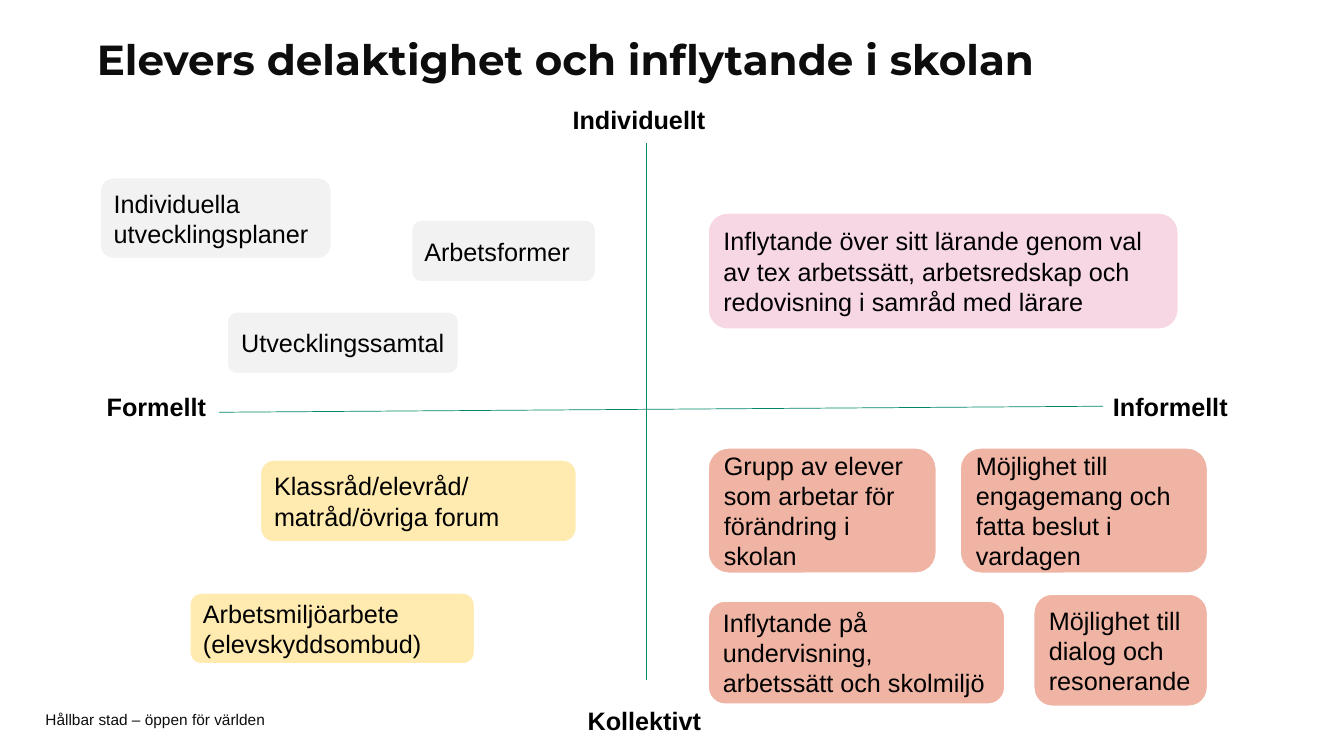
from lxml import etree
from pptx import Presentation
from pptx.dml.color import RGBColor
from pptx.enum.shapes import MSO_CONNECTOR, MSO_SHAPE
from pptx.enum.text import MSO_ANCHOR, MSO_AUTO_SIZE, PP_ALIGN
from pptx.oxml.ns import qn
from pptx.util import Pt

PX = 9144
TITLE_ONLY = 5
STRAIGHT = MSO_CONNECTOR.STRAIGHT
ROUNDED = MSO_SHAPE.ROUNDED_RECTANGLE
TOP, MIDDLE = MSO_ANCHOR.TOP, MSO_ANCHOR.MIDDLE
NO_FIT, GROW = MSO_AUTO_SIZE.NONE, MSO_AUTO_SIZE.SHAPE_TO_FIT_TEXT
LEFT, CENTER = PP_ALIGN.LEFT, PP_ALIGN.CENTER

COLORS = {
    "ink": "0D0D0D",
    "black": "000000",
    "white": "FFFFFF",
    "axis": "008767",
    "grey": "F2F2F2",
    "pink": "F7D7E4",
    "yellow": "FFEBAF",
    "coral": "F0B4A4",
}
TITLE_FONT = {"name": "Montserrat", "size": Pt(30), "bold": True}
LABEL_FONT = {"name": "Arial", "size": Pt(18), "bold": True}
CARD_FONT = {"name": "Arial", "size": Pt(18), "bold": False}
FOOTER_FONT = {"name": "Arial", "size": Pt(11), "bold": False}

AXES = [(641, 142, 641, 675), (1094, 403, 217, 409)]
LABELS = [
    ("Individuellt", (558, 99, 165, 40)),
    ("Kollektivt", (573, 695, 165, 40)),
    ("Formellt", (96, 383, 165, 40)),
    ("Informellt", (1094, 383, 137, 40)),
]
CARDS = [
    ("Individuella utvecklingsplaner", (99, 176, 230, 81), "grey", LEFT),
    ("Utvecklingssamtal", (225, 309, 230, 62), "grey", CENTER),
    ("Arbetsformer", (408, 218, 183, 62), "grey", LEFT),
    ("Inflytande över sitt lärande genom val av tex arbetssätt, "
     "arbetsredskap och redovisning i samråd med lärare",
     (702, 211, 467, 116), "pink", LEFT),
    ("Klassråd/elevråd/matråd/övriga forum", (258, 456, 314, 82), "yellow", LEFT),
    ("Arbetsmiljöarbete (elevskyddsombud)", (188, 588, 283, 71), "yellow", LEFT),
    ("Grupp av elever som arbetar för förändring i skolan",
     (702, 444, 227, 125), "coral", LEFT),
    ("Möjlighet till engagemang och fatta beslut i vardagen",
     (952, 444, 246, 125), "coral", LEFT),
    ("Inflytande på undervisning, arbetssätt och skolmiljö",
     (702, 596, 295, 103), "coral", LEFT),
    ("Möjlighet till dialog och resonerande", (1025, 589, 173, 112), "coral", LEFT),
]


def emu(lengths):
    """Turn px lengths into EMU."""
    return [length * PX for length in lengths]


def color(name):
    """Look up a named colour."""
    return RGBColor.from_string(COLORS[name])


def set_attributes(target, values):
    """Set each attribute named in a dict."""
    for name, value in values.items():
        setattr(target, name, value)


def write_text(shape, text, font, ink, alignment=LEFT, insets=(10, 5),
               anchor=MIDDLE, fit=NO_FIT):
    """Fill a shape with one formatted paragraph."""
    across, down = emu(insets)
    frame = shape.text_frame
    frame.text = text
    set_attributes(frame, {
        "word_wrap": True, "auto_size": fit, "vertical_anchor": anchor,
        "margin_left": across, "margin_right": across,
        "margin_top": down, "margin_bottom": down,
    })
    paragraph = frame.paragraphs[0]
    paragraph.alignment = alignment
    run = paragraph.runs[0]
    set_attributes(run.font, font)
    run.font.color.rgb = color(ink)


def add_title(slide, text, box):
    """Place and format the title placeholder."""
    title = slide.shapes.title
    set_attributes(title, dict(zip(("left", "top", "width", "height"), emu(box))))
    write_text(title, text, TITLE_FONT, "ink", insets=(0, 5))
    title.text_frame.paragraphs[0].line_spacing = 0.9


def add_axis(slide, ends):
    """Draw one thin axis line."""
    axis = slide.shapes.add_connector(STRAIGHT, *emu(ends))
    axis.line.color.rgb = color("axis")
    axis.line.width = Pt(0.5)
    etree.SubElement(axis._element.spPr, qn("a:effectLst"))


def add_text(slide, text, box, font, ink, **options):
    """Add a text box."""
    write_text(slide.shapes.add_textbox(*emu(box)), text, font, ink, **options)


def add_card(slide, text, box, fill, alignment):
    """Add a rounded card with text."""
    card = slide.shapes.add_shape(ROUNDED, *emu(box))
    card.shadow.inherit = False
    card.fill.solid()
    card.fill.fore_color.rgb = color(fill)
    card.line.color.rgb = color("white")
    card.line.width = Pt(1.5)
    write_text(card, text, CARD_FONT, "black", alignment)


def main():
    """Build and save the slide."""
    presentation = Presentation()
    presentation.slide_width, presentation.slide_height = emu((1333, 750))
    slide = presentation.slides.add_slide(presentation.slide_layouts[TITLE_ONLY])
    add_title(slide, "Elevers delaktighet och inflytande i skolan", (96, 21, 1003, 81))
    add_text(slide, "Hållbar stad – öppen för världen", (45, 706, 945, 16),
             FOOTER_FONT, "ink", insets=(0, 0))
    for ends in AXES:
        add_axis(slide, ends)
    for text, box in LABELS:
        add_text(slide, text, box, LABEL_FONT, "black", anchor=TOP, fit=GROW)
    for card in CARDS:
        add_card(slide, *card)
    presentation.save("out.pptx")


if __name__ == "__main__":
    main()
